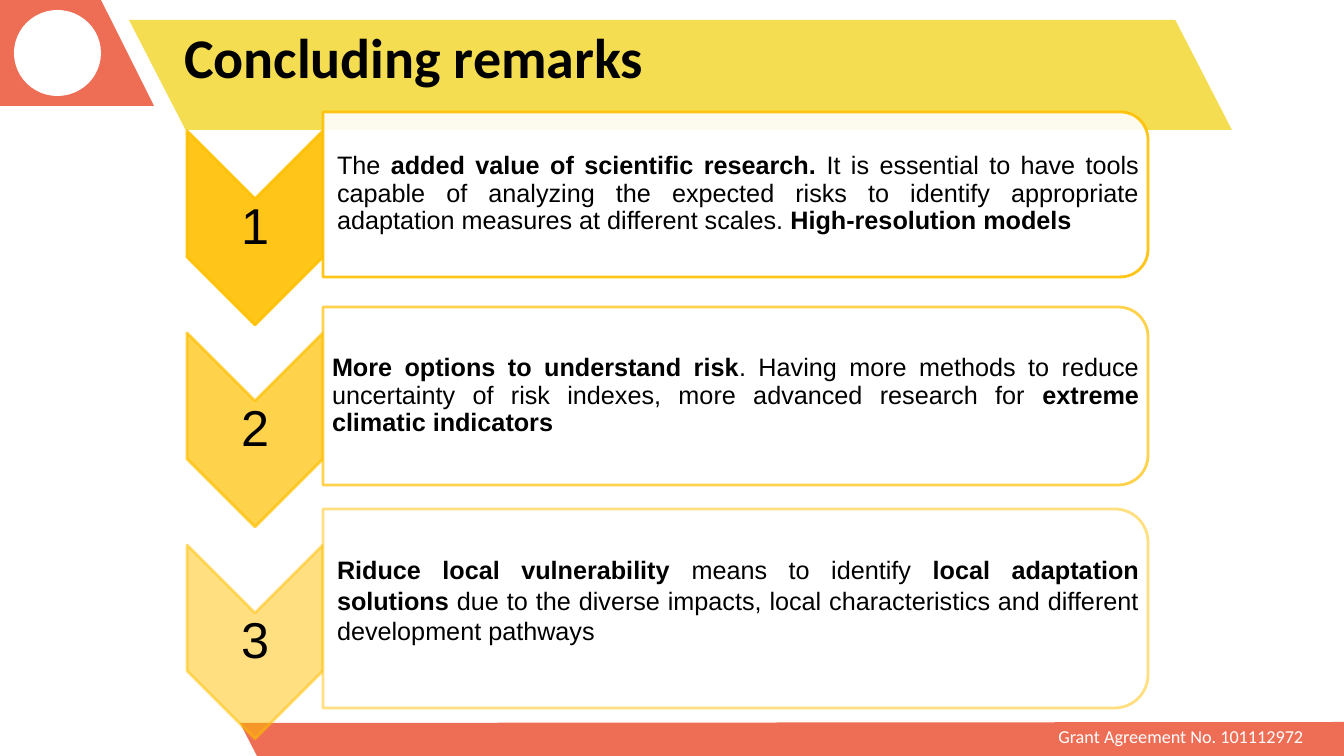
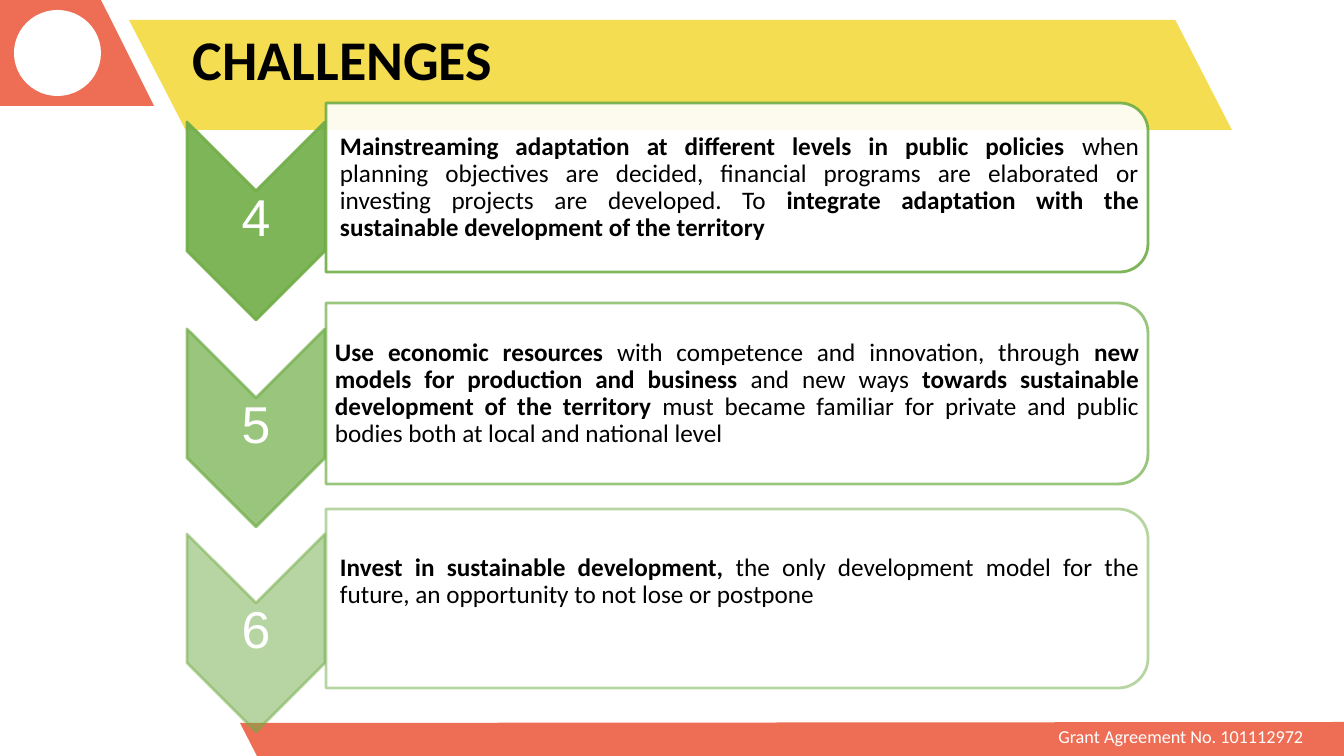
from lxml import etree
from pptx import Presentation
from pptx.dml.color import RGBColor
from pptx.enum.shapes import MSO_SHAPE as SHAPE
from pptx.enum.text import MSO_ANCHOR as ANCHOR, MSO_AUTO_SIZE as AUTO_SIZE, PP_ALIGN as ALIGN
from pptx.oxml.ns import qn
from pptx.util import Pt

EMU_PER_PX = 914400 / 100.8
SLIDE_W, SLIDE_H = 1344, 756

CORAL = RGBColor(0xEE, 0x6E, 0x55)
YELLOW = RGBColor(0xF4, 0xDD, 0x51)
AMBER = RGBColor(0xFF, 0xC0, 0x00)
GREEN = RGBColor(0x70, 0xAD, 0x47)
BLACK = RGBColor(0, 0, 0)
WHITE = RGBColor(0xFF, 0xFF, 0xFF)

GRANT = "Grant Agreement No. 101112972"
CORNER = [(154, 106), (101, 0), (0, 0), (0, 106)]
FOOTER = [(240, 723), (SLIDE_W, 722), (SLIDE_W, SLIDE_H), (257, SLIDE_H)]
STEP_OPACITY = (90, 70, 50)
TEXT_INSETS = (14, 9, 14)
CARD_RIGHT, CHEVRON_LEFT = 1148, 187
CARD_TEXT_H, NUMBER_H = 130, 58

# Content: text between ** marks is bold
# Step: number, chevron top, card top, card height, text middle, line spacing, text
SLIDES = [
    dict(
        title="Concluding remarks", title_at=(174, 24), color=AMBER, font="Arial",
        number_color=BLACK, number_size=36, chevron=(136, 194), card_left=323,
        steps=[
            ("1", 131, 112, 165, 194, 0.9,
             "The **added value of scientific research. **It is essential to have tools "
             "capable of analyzing the expected risks to identify appropriate adaptation "
             "measures at different scales. **High-resolution models**"),
            ("2", 333, 307, 178, 396, 0.9,
             "**More options to understand risk**. Having more methods to reduce uncertainty "
             "of risk indexes, more advanced research for **extreme climatic indicators**"),
            ("3", 545, 509, 199, 600, 1.0,
             "**Riduce local vulnerability **means to identify **local adaptation solutions "
             "**due to the diverse impacts, local characteristics and different "
             "development pathways"),
        ]),
    dict(
        title="CHALLENGES", title_at=(183, 26), color=GREEN, font="Calibri",
        number_color=WHITE, number_size=37, chevron=(138, 198), card_left=326,
        steps=[
            ("4", 122, 103, 169, 188, 0.9,
             "**Mainstreaming adaptation at different levels in public policies **when "
             "planning objectives are decided, financial programs are elaborated or investing "
             "projects are developed. To **integrate adaptation with the sustainable "
             "development of the territory**"),
            ("5", 329, 303, 181, 394, 0.9,
             "**Use economic resources **with competence and innovation, through **new models "
             "for production and business **and new ways **towards sustainable development "
             "of the territory **must became familiar for private and public bodies both at "
             "local and national level"),
            ("6", 534, 509, 179, 582, 0.9,
             "**Invest in sustainable development, **the only development model for the "
             "future, an opportunity to not lose or postpone"),
        ]),
]


def px(*lengths):
    return [round(length * EMU_PER_PX) for length in lengths]


def set_opacity(color_format_owner, percent):
    for color in color_format_owner.iter(qn("a:srgbClr")):
        etree.SubElement(color, qn("a:alpha"), val=str(percent * 1000))


def paint(shape, color):
    shape.shadow.inherit = False
    shape.fill.solid()
    shape.fill.fore_color.rgb = color
    shape.line.fill.background()


def add_outline(slide, points, color):
    builder = slide.shapes.build_freeform(*points[0], scale=EMU_PER_PX)
    builder.add_line_segments(points[1:], close=True)
    paint(builder.convert_to_shape(), color)


def add_plain(slide, kind, box, color):
    shape = slide.shapes.add_shape(kind, *px(*box))
    paint(shape, color)
    return shape


def add_turned(slide, kind, box, fill, fill_opacity, line, line_opacity):
    """Draw a shape turned a quarter clockwise so that it covers box."""
    left, top, width, height = box
    shift = (width - height) / 2
    shape = add_plain(slide, kind, (left + shift, top - shift, height, width), fill)
    shape.rotation = 90
    set_opacity(shape.fill._xPr.find(qn("a:solidFill")), fill_opacity)
    shape.line.color.rgb = line
    shape.line.width = Pt(2)
    set_opacity(shape.line._ln, line_opacity)


def set_text(shape, text, font, size, color, align, insets, spacing=1.0, anchor=ANCHOR.MIDDLE,
             bold=False):
    frame = shape.text_frame
    frame.word_wrap = True
    frame.auto_size = AUTO_SIZE.NONE
    frame.vertical_anchor = anchor
    (frame.margin_left, frame.margin_top,
     frame.margin_right, frame.margin_bottom) = px(*insets)
    paragraph = frame.paragraphs[0]
    paragraph.alignment = align
    paragraph.line_spacing = spacing
    paragraph.font.name = font
    paragraph.font.size = Pt(size)
    paragraph.font.color.rgb = color
    paragraph.font.bold = bold
    for index, part in enumerate(text.split("**")):
        if part:
            run = paragraph.add_run()
            run.text = part
            if index % 2:
                run.font.bold = True


def add_frame(slide, title, title_at):
    """Corner, title band, badge, footer and title."""
    add_outline(slide, CORNER, CORAL)
    band = add_plain(slide, SHAPE.PARALLELOGRAM, (129, 20, 1103, 110), YELLOW)
    band.adjustments[0] = 0.515
    band._element.spPr.find(qn("a:xfrm")).set("flipH", "1")
    add_plain(slide, SHAPE.OVAL, (14, 10, 87, 86), WHITE)
    add_outline(slide, FOOTER, CORAL)
    grant = slide.shapes.add_textbox(*px(1008, 720, 305, 32))
    set_text(grant, GRANT, "Calibri", 13, WHITE, ALIGN.RIGHT, (10, 5, 10, 5), anchor=ANCHOR.TOP)

    heading = slide.shapes.title
    heading.left, heading.top, heading.width, heading.height = px(*title_at, 988, 72)
    set_text(heading, title, "Calibri", 40, BLACK, ALIGN.LEFT, (10,) * 4, 0.9, bold=True)
    slide.shapes._spTree.append(heading._element)  # bring in front of the band


def add_step(slide, look, step, opacity, inset):
    number, chevron_top, card_top, card_h, text_mid, spacing, text = step
    color, card_left = look["color"], look["card_left"]
    chevron_w, chevron_h = look["chevron"]

    # Numbered chevron
    add_turned(slide, SHAPE.CHEVRON, (CHEVRON_LEFT, chevron_top, chevron_w, chevron_h),
               color, opacity, color, opacity)
    label = slide.shapes.add_textbox(
        *px(CHEVRON_LEFT, chevron_top + chevron_w / 2, chevron_w, NUMBER_H))
    set_text(label, number, "Arial", look["number_size"], look["number_color"],
             ALIGN.CENTER, (3,) * 4, 0.9)

    # Card and its text
    card_w = CARD_RIGHT - card_left
    add_turned(slide, SHAPE.ROUND_2_SAME_RECTANGLE, (card_left, card_top, card_w, card_h),
               WHITE, 90, color, opacity)
    body = slide.shapes.add_textbox(
        *px(card_left, text_mid - CARD_TEXT_H / 2, card_w - 8, CARD_TEXT_H))
    set_text(body, text, look["font"], 18, BLACK, ALIGN.JUSTIFY, (inset, 1, 1, 1), spacing)


def main():
    deck = Presentation()
    deck.slide_width, deck.slide_height = px(SLIDE_W, SLIDE_H)
    for look in SLIDES:
        slide = deck.slides.add_slide(deck.slide_layouts[5])
        add_frame(slide, look["title"], look["title_at"])
        for step, opacity, inset in zip(look["steps"], STEP_OPACITY, TEXT_INSETS):
            add_step(slide, look, step, opacity, inset)
    deck.save("out.pptx")


if __name__ == "__main__":
    main()
